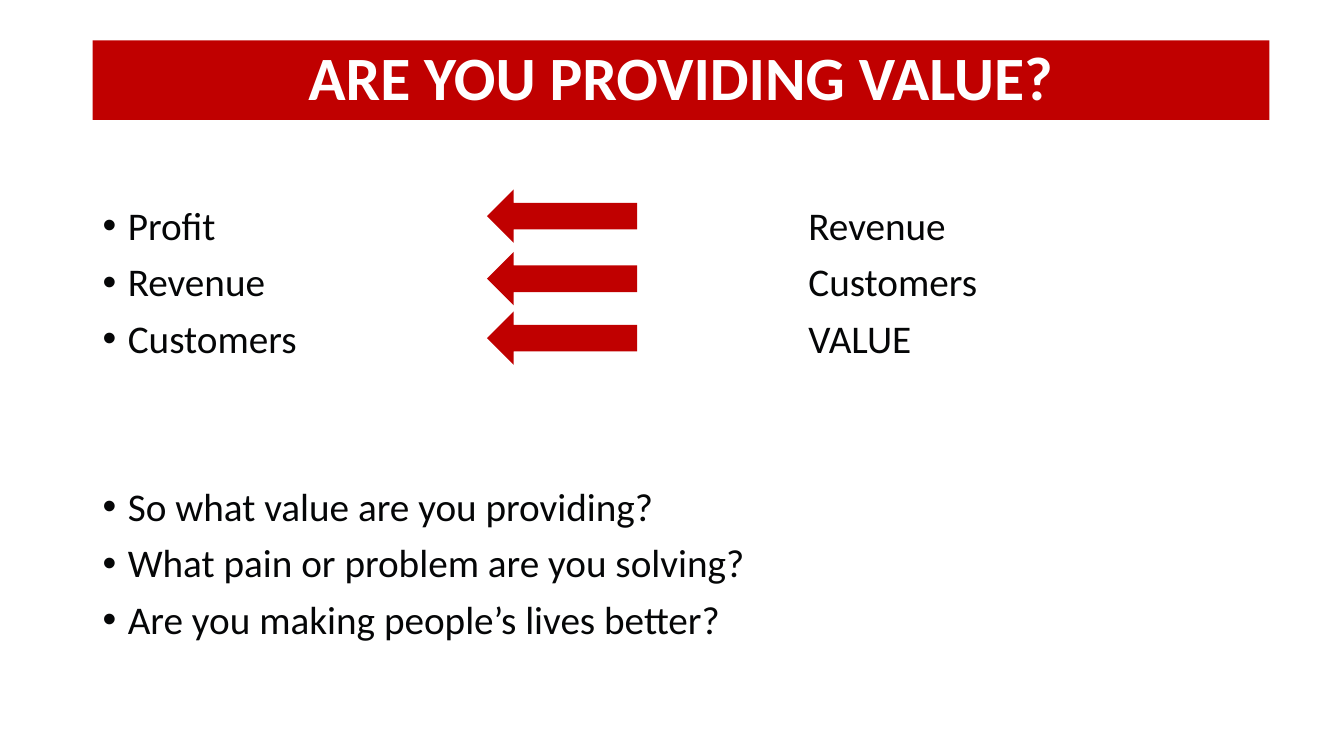
from dataclasses import dataclass

from lxml import etree
from pptx import Presentation
from pptx.dml.color import RGBColor
from pptx.enum.shapes import MSO_SHAPE
from pptx.enum.text import MSO_ANCHOR, PP_ALIGN
from pptx.oxml.ns import qn
from pptx.util import Inches, Pt

LEFT_ARROW, RECTANGLE = MSO_SHAPE.LEFT_ARROW, MSO_SHAPE.RECTANGLE
TOP, MIDDLE = MSO_ANCHOR.TOP, MSO_ANCHOR.MIDDLE
LEFT, CENTER = PP_ALIGN.LEFT, PP_ALIGN.CENTER


@dataclass(frozen=True)
class Theme:
    red: RGBColor = RGBColor(0xC0, 0x00, 0x00)
    ink: RGBColor = RGBColor(0x05, 0x06, 0x07)
    white: RGBColor = RGBColor(0xFF, 0xFF, 0xFF)
    font: str = "Calibri"
    title_size: int = 44
    body_size: int = 28


theme = Theme()


def write(para, text, size=theme.body_size, color=theme.ink, bold=False,
          align=LEFT, before=0, bullet=False, tab=None):
    properties = para._p.get_or_add_pPr()
    if bullet:
        properties.set("marL", str(Inches(0.25)))
        properties.set("indent", str(-Inches(0.25)))
        etree.SubElement(properties, qn("a:buFont"), typeface="Arial")
        etree.SubElement(properties, qn("a:buChar"), char="•")
    if tab:
        stops = etree.SubElement(properties, qn("a:tabLst"))
        etree.SubElement(stops, qn("a:tab"), pos=str(tab), algn="l")
    para.alignment = align
    para.line_spacing = 0.9
    para.space_before = Pt(before)
    span = para.add_run()
    span.text = text
    span.font.name = theme.font
    span.font.size = Pt(size)
    span.font.bold = bold
    span.font.color.rgb = color


def add_red_shape(kind, left, top, width, height):
    shape = page.shapes.add_shape(kind, Inches(left), Inches(top), Inches(width), Inches(height))
    shape.shadow.inherit = False
    shape.fill.solid()
    shape.fill.fore_color.rgb = theme.red
    shape.line.fill.background()
    return shape


deck = Presentation()
deck.slide_width, deck.slide_height = Inches(13.33), Inches(7.5)
page = deck.slides.add_slide(deck.slide_layouts[6])

# Body: what drives what, then the questions
drivers = ["Profit\tRevenue", "Revenue\tCustomers", "Customers\tVALUE"]
questions = [
    "So what value are you providing?",
    "What pain or problem are you solving?",
    "Are you making people’s lives better?",
]
body = page.shapes.add_textbox(Inches(0.92), Inches(2), Inches(11.5), Inches(4.76)).text_frame
body.word_wrap = True
body.vertical_anchor = TOP
for index, line in enumerate(drivers + questions):
    para = body.add_paragraph() if index else body.paragraphs[0]
    gap = {0: 0, len(drivers): 90}.get(index, 10)
    write(para, line, before=gap, bullet=True, tab=Inches(7) if "\t" in line else None)

# Arrows from each driver to its result
for arrow_top in (1.88, 2.5, 3.09):
    add_red_shape(LEFT_ARROW, 4.83, arrow_top, 1.49, 0.53)

# Title band
band = add_red_shape(RECTANGLE, 0.92, 0.4, 11.67, 0.79).text_frame
band.word_wrap = True
band.vertical_anchor = MIDDLE
write(band.paragraphs[0], "ARE YOU PROVIDING VALUE?", size=theme.title_size,
      color=theme.white, bold=True, align=CENTER)

deck.save("out.pptx")
